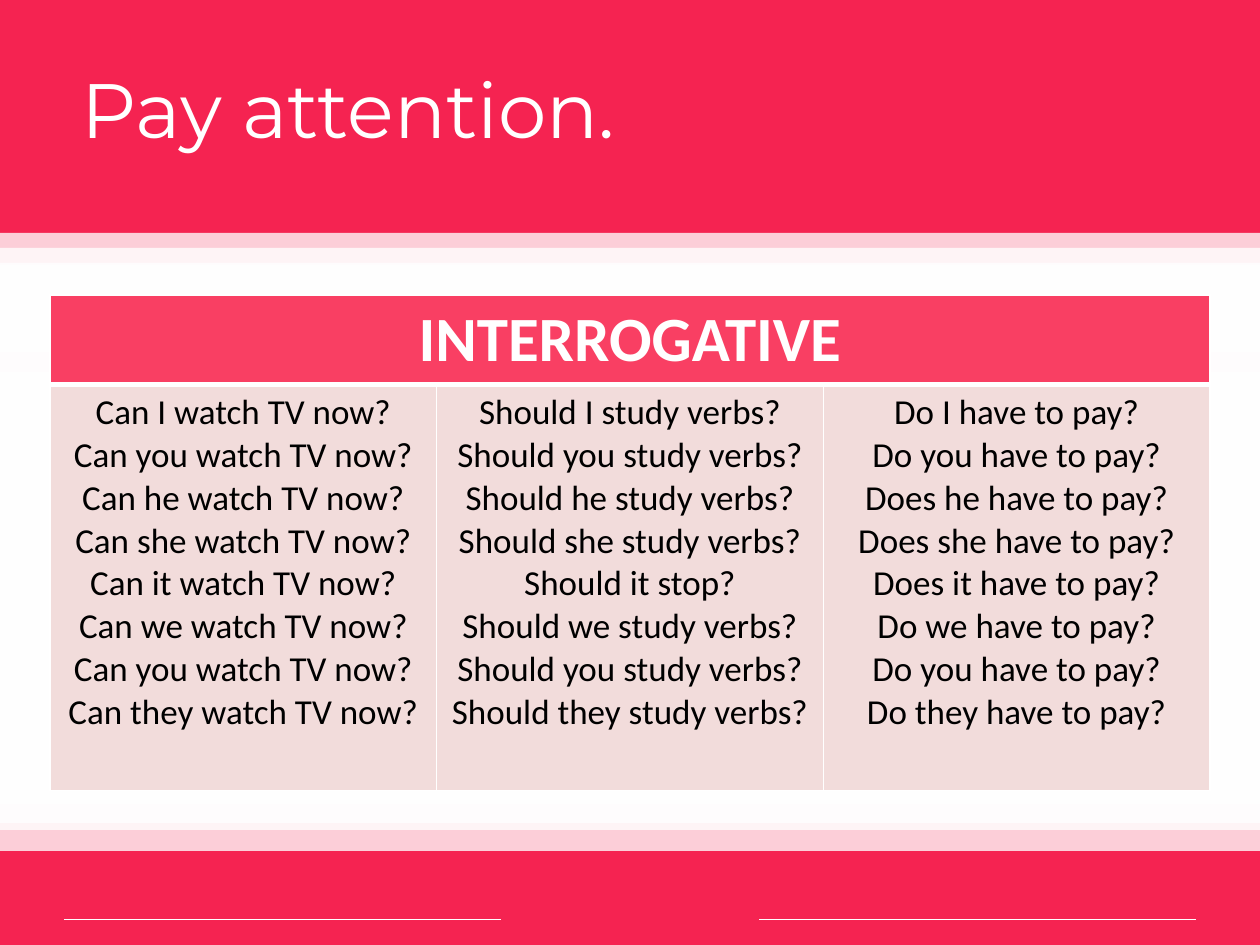
from pptx import Presentation
from pptx.dml.color import RGBColor
from pptx.enum.shapes import MSO_CONNECTOR, MSO_SHAPE
from pptx.enum.text import PP_ALIGN
from pptx.oxml.ns import qn
from pptx.util import Emu, Pt
from lxml.etree import SubElement

WIDTH, HEIGHT = 1260, 945
RED, ROSE, BLUSH, WHITE, BLACK = "F52351", "F93F63", "F2DCDB", "FFFFFF", "000000"


def px(n):
    return Emu(round(n * 914400 / 126))


def rgb(value):
    return RGBColor.from_string(value)


class SlideBuilder:
    title_font = "Montserrat"
    table_font = "Calibri"

    def __init__(self, slide):
        self.s = slide

    def style(self, p, font, size, color, bold=False):
        for r in p.runs:
            r.font.name, r.font.size, r.font.bold = font, Pt(size), bold
            r.font.color.rgb = rgb(color)

    def rect(self, x, y, w, h, color, opacity=100):
        sp = self.s.shapes.add_shape(MSO_SHAPE.RECTANGLE, px(x), px(y), px(w), px(h))
        sp.shadow.inherit = False
        sp.fill.solid()
        sp.fill.fore_color.rgb = rgb(color)
        sp.line.fill.background()
        if opacity < 100:
            clr = sp.fill._xPr.find(qn("a:solidFill"))[0]
            SubElement(clr, qn("a:alpha"), val=str(opacity * 1000))

    def line(self, x1, y1, x2, y2, color, width):
        c = self.s.shapes.add_connector(MSO_CONNECTOR.STRAIGHT, px(x1), px(y1), px(x2), px(y2))
        c.line.color.rgb = rgb(color)
        c.line.width = Pt(width)
        SubElement(c._element.spPr, qn("a:effectLst"))

    def title(self, x, y, w, h, text):
        tf = self.s.shapes.add_textbox(px(x), px(y), px(w), px(h)).text_frame
        tf.word_wrap = True
        tf.text = text
        self.style(tf.paragraphs[0], self.title_font, 44, WHITE)

    def cell(self, cell, lines, fill, size, color, bold, top, bottom):
        cell.text = "\n".join(lines)
        for p in cell.text_frame.paragraphs:
            p.alignment = PP_ALIGN.CENTER
            self.style(p, self.table_font, size, color, bold)
        tcPr = cell._tc.get_or_add_tcPr()
        for side, width in (("L", 1), ("R", 1), ("T", top), ("B", bottom)):
            ln = SubElement(tcPr, qn(f"a:ln{side}"), w=str(Pt(width)))
            SubElement(SubElement(ln, qn("a:solidFill")), qn("a:srgbClr"), val=WHITE)
        cell.fill.solid()
        cell.fill.fore_color.rgb = rgb(fill)

    def table(self, x, y, w, heights, heading, columns):
        n = len(columns)
        table = self.s.shapes.add_table(2, n, px(x), px(y), px(w), px(sum(heights))).table
        for row, h in zip(table.rows, heights):
            row.height = px(h)
        for i, lines in enumerate(columns):
            table.columns[i].width = px(w / n)
            header = [heading] if i == 0 else []
            self.cell(table.cell(0, i), header, ROSE, 36, WHITE, True, 1, 3)
            self.cell(table.cell(1, i), lines, BLUSH, 20, BLACK, False, 3, 1)
        table.cell(0, 0).merge(table.cell(0, n - 1))


def main():
    prs = Presentation()
    prs.slide_width, prs.slide_height = px(WIDTH), px(HEIGHT)
    b = SlideBuilder(prs.slides.add_slide(prs.slide_layouts[6]))

    # Red background and footer, with a gap in the footer rule
    b.rect(0, 0, WIDTH, HEIGHT, RED)
    b.rect(0, 879, WIDTH, 66, RED)
    b.line(64, 919, 1196, 919, WHITE, 0.25)
    b.rect(501, 879, 258, 66, RED)

    # Overlapping translucent bands that build up to white
    bands = [(263, 89), (248, 89), (233, 64), (372, 451), (265, 515),
             (319, 426), (735, 116), (714, 116), (277, 527)]
    for y, h in bands:
        b.rect(0, y, WIDTH, h, WHITE, opacity=78)

    # Table of questions, one modal verb per column
    subjects = ["I", "you", "he", "she", "it", "we", "you", "they"]
    can = [f"Can {who} watch TV now?" for who in subjects]
    should = [f"Should {who} " + ("stop?" if who == "it" else "study verbs?")
              for who in subjects]
    have_to = [("Does" if who in ("he", "she", "it") else "Do") + f" {who} have to pay?"
               for who in subjects]
    b.table(50, 295, 1160, (88, 406), "INTERROGATIVE", [can, should, have_to])

    # Title
    b.title(69, 55, 1122, 179, "Pay attention.")

    prs.save("out.pptx")


if __name__ == "__main__":
    main()
